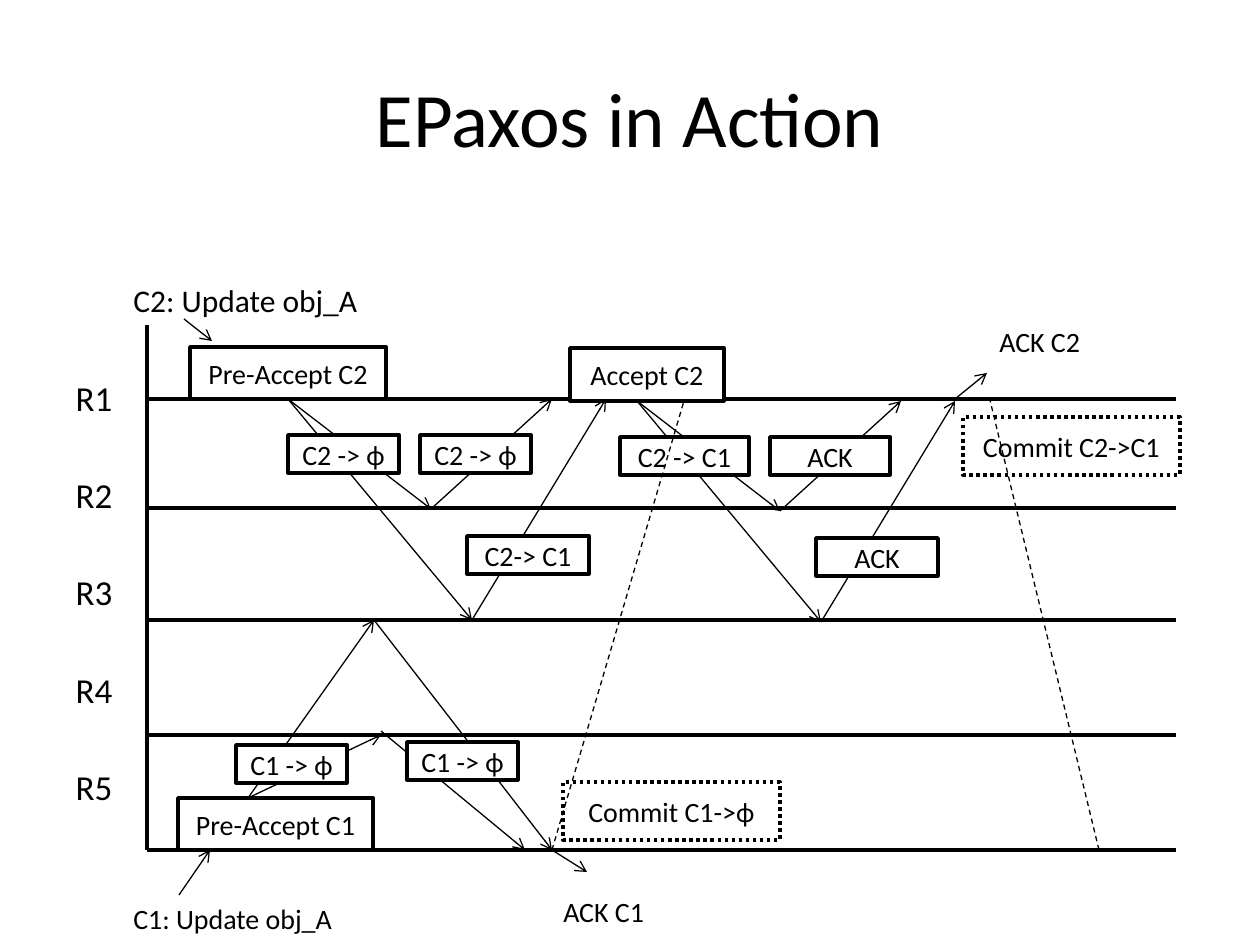
import dataclasses

import lxml.etree
import pptx
import pptx.dml.color
import pptx.enum.dml
import pptx.enum.shapes
import pptx.enum.text
import pptx.oxml.ns
import pptx.util

PX = 914400 / 126


@dataclasses.dataclass(frozen=True)
class Theme:
    """Colours, type sizes and line widths of the slide."""
    font: str = "Calibri"
    ink: str = "000000"
    paper: str = "FFFFFF"
    title: int = 44
    replica: int = 20
    request: int = 18
    label: int = 16
    axis_line: float = 2.25
    box_line: float = 2
    arrow_line: float = 0.75


@dataclasses.dataclass(frozen=True)
class Box:
    """A rectangle in px."""
    left: int
    top: int
    width: int = 0
    height: int = 0

    def at(self, x, y, width=0, height=0):
        """Return a box placed relative to this one."""
        return Box(self.left + x, self.top + y, width, height)

    def emu(self):
        """Return left, top, width and height in EMU."""
        return [emu(n) for n in (self.left, self.top, self.width, self.height)]


THEME = Theme()
DASHES = pptx.enum.dml.MSO_LINE
CENTER = pptx.enum.text.PP_ALIGN.CENTER
MIDDLE = pptx.enum.text.MSO_ANCHOR.MIDDLE
REPLICA_ROWS = (0, 109, 221, 336, 451)


def emu(px):
    """Convert px to EMU."""
    return pptx.util.Emu(round(px * PX))


def colour(value):
    """Turn a hex string into a colour."""
    return pptx.dml.color.RGBColor.from_string(value)


def add_text(paragraph, text, size, align=None):
    """Add one formatted run to a paragraph."""
    if align is not None:
        paragraph.alignment = align
    run = paragraph.add_run()
    run.text = text
    run.font.name = THEME.font
    run.font.size = pptx.util.Pt(size)
    run.font.color.rgb = colour(THEME.ink)


def place(shape, box):
    """Move a placeholder into a box."""
    shape.left, shape.top, shape.width, shape.height = box.emu()


def style_line(line, width, dash=None):
    """Format a line or an outline."""
    line.color.rgb = colour(THEME.ink)
    line.width = pptx.util.Pt(width)
    if dash is not None:
        line.dash_style = dash


def add_line(slide, box, start, end, width=THEME.arrow_line, dash=None, arrow=False):
    """Draw a straight line between two points of a box."""
    begin, finish = box.at(*start), box.at(*end)
    line = slide.shapes.add_connector(
        pptx.enum.shapes.MSO_CONNECTOR.STRAIGHT,
        emu(begin.left), emu(begin.top), emu(finish.left), emu(finish.top))
    style_line(line.line, width, dash)
    if arrow:
        outline = line.line._get_or_add_ln()
        lxml.etree.SubElement(outline, pptx.oxml.ns.qn("a:tailEnd"), type="arrow")
    lxml.etree.SubElement(line._element.spPr, pptx.oxml.ns.qn("a:effectLst"))
    return line


def add_box(slide, box, text, dash=None):
    """Draw an outlined rectangle with centred text."""
    shape = slide.shapes.add_shape(pptx.enum.shapes.MSO_SHAPE.RECTANGLE, *box.emu())
    shape.shadow.inherit = False
    shape.fill.solid()
    shape.fill.fore_color.rgb = colour(THEME.paper)
    style_line(shape.line, THEME.box_line, dash)
    shape.text_frame.vertical_anchor = MIDDLE
    add_text(shape.text_frame.paragraphs[0], text, THEME.label, CENTER)
    return shape


def add_label(slide, box, text, size=THEME.label):
    """Write a free-standing label."""
    label = slide.shapes.add_textbox(*box.emu())
    label.text_frame.word_wrap = False
    add_text(label.text_frame.paragraphs[0], text, size)


def add_title(slide, box, text):
    """Fill the title placeholder."""
    title = slide.shapes.title
    place(title, box)
    title.text_frame.vertical_anchor = MIDDLE
    add_text(title.text_frame.paragraphs[0], text, THEME.title, CENTER)


def add_replica_names(slide, box, names):
    """List the replicas down the left in the body placeholder."""
    body = slide.placeholders[1]
    place(body, box)
    frame = body.text_frame
    frame.auto_size = pptx.enum.text.MSO_AUTO_SIZE.NONE
    frame.margin_top = emu(208)
    for index, name in enumerate(names):
        paragraph = frame.add_paragraph() if index else frame.paragraphs[0]
        properties = paragraph._p.get_or_add_pPr()
        properties.set("marL", "0")
        properties.set("indent", "0")
        lxml.etree.SubElement(properties, pptx.oxml.ns.qn("a:buNone"))
        paragraph.space_before = pptx.util.Pt(31.7 if index else 0)
        add_text(paragraph, name, THEME.replica)


def add_timelines(slide, box):
    """Draw one time line per replica and the starting axis."""
    for y in REPLICA_ROWS:
        add_line(slide, box, (0, y), (box.width, y), THEME.axis_line)
    add_line(slide, box, (0, -74), (0, box.height), THEME.axis_line)


def add_request(slide, box, text, size, start, end):
    """Write a client request with its arrow."""
    add_label(slide, box, text, size)
    add_line(slide, box, start, end, arrow=True)


def add_c2_round(slide, box, phase, phase_area, messages):
    """Draw a C2 round from R1 to R2 and R3 and back."""
    x, y, width, height = phase_area
    phase_box = add_box(slide, box.at(x, y, width, height), phase)
    for replica, reply in (((143, 110), (264, 0)), ((184, 221), (318, 0))):
        sent = add_line(slide, box, (0, 0), replica, arrow=True)
        if 2 * x + width == 0:
            sent.begin_connect(phase_box, 2)
        add_line(slide, box, replica, reply, arrow=True)
    for (text, left, width), top in zip(messages, (36, 36, 137)):
        add_box(slide, box.at(left, top, width, 38), text)


def add_c1_round(slide, box):
    """Draw the C1 round from R5 to R3 and R4 and back."""
    add_box(slide, box.at(0, 178, 195, 52), "Pre-Accept C1")
    for reached, leaving, reply in (((196, 0), (196, 0), (374, 230)),
                                    ((203, 115), (203, 111), (347, 230))):
        add_line(slide, box, (70, 178), reached, arrow=True)
        add_line(slide, box, leaving, reply, arrow=True)
    for left, top in ((58, 125), (229, 122)):
        add_box(slide, box.at(left, top, 111, 38), "C1 -> ϕ")


def add_commit(slide, box, commit, ack, commit_at, ack_at, arrow_end, spread):
    """Draw a commit note, its client reply and its spread to the replicas."""
    add_box(slide, box.at(*commit_at, 217, 58), commit, DASHES.ROUND_DOT)
    add_line(slide, box, (0, 0), arrow_end, arrow=True)
    add_label(slide, box.at(*ack_at, 111, 47), ack)
    add_line(slide, box, *spread, dash=DASHES.DASH)


def main():
    """Build and save the slide."""
    deck = pptx.Presentation()
    deck.slide_width, deck.slide_height = emu(1260), emu(945)
    slide = deck.slides.add_slide(deck.slide_layouts[1])
    add_title(slide, Box(63, 38, 1134, 157), "EPaxos in Action")
    add_replica_names(slide, Box(63, 168, 1134, 755), [f"R{n}" for n in range(1, 6)])
    add_timelines(slide, Box(147, 399, 1029, 451))
    add_request(slide, Box(121, 895, 227, 47), "C1: Update obj_A", THEME.label,
                (58, 0), (89, -45))
    add_request(slide, Box(121, 275, 252, 50), "C2: Update obj_A", THEME.request,
                (63, 44), (91, 66))
    add_c1_round(slide, Box(178, 620, 374, 230))
    add_c2_round(slide, Box(288, 399, 318, 221), "Pre-Accept C2", (-98, -52, 196, 52),
                 (("C2 -> ϕ", 0, 111), ("C2 -> ϕ", 132, 111), ("C2-> C1", 179, 122)))
    add_c2_round(slide, Box(637, 401, 318, 221), "Accept C2", (-67, -53, 154, 53),
                 (("C2 -> C1", -17, 129), ("ACK", 133, 120), ("ACK", 179, 122)))
    add_commit(slide, Box(552, 850), "Commit C1->ϕ", "ACK C1", (11, -68), (-1, 38),
               (35, 22), ((0, 0), (132, -449)))
    add_commit(slide, Box(955, 399), "Commit C2->C1", "ACK C2", (8, 18), (32, -81),
               (32, -26), ((144, 451), (34, -3)))
    deck.save("out.pptx")


if __name__ == "__main__":
    main()
